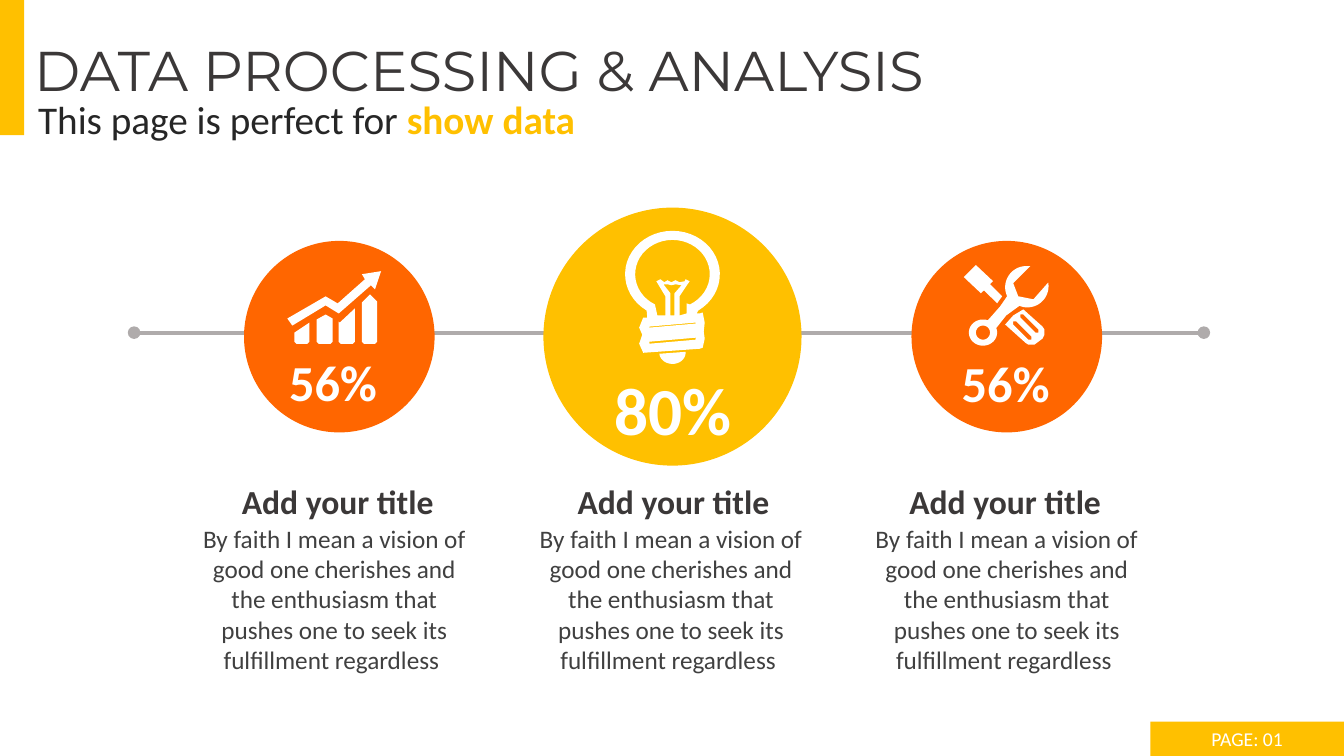
from math import cos, radians, sin

from lxml.etree import SubElement
from pptx import Presentation
from pptx.dml.color import RGBColor
from pptx.enum.shapes import MSO_CONNECTOR, MSO_SHAPE
from pptx.enum.text import MSO_ANCHOR, MSO_AUTO_SIZE, PP_ALIGN
from pptx.oxml.ns import qn
from pptx.util import Inches, Pt

COLORS = {
    "yellow": "FFC000",
    "orange": "FF6600",
    "white": "FFFFFF",
    "line": "AFABAB",
    "heading": "3B3838",
    "body": "404040",
    "subtitle": "262626",
}
BODY = (
    "By faith I mean a vision of good one cherishes and the enthusiasm "
    "that pushes one to seek its fulfillment regardless "
)


def color(name):
    return RGBColor.from_string(COLORS[name])


def arc(center_x, center_y, radius_x, radius_y, start, end, steps=40):
    angles = [radians(start + (end - start) * i / steps) for i in range(steps + 1)]
    return [(center_x + radius_x * cos(a), center_y + radius_y * sin(a)) for a in angles]


def bulb_outlines():
    return [
        arc(6.67, 2.72, 0.47, 0.43, 123, 417)
        + [(6.91, 3.11), (6.94, 3.11), (6.97, 3.1), (6.99, 3.2), (6.98, 3.29),
           (6.99, 3.36), (6.97, 3.45), (6.94, 3.46), (6.38, 3.5), (6.34, 3.41),
           (6.37, 3.32), (6.34, 3.25), (6.38, 3.15), (6.42, 3.15)],
        arc(6.67, 2.72, 0.37, 0.34, 118, 422)
        + [(6.81, 3.01), (6.81, 3.11), (6.74, 3.13), (6.74, 2.94), (6.84, 2.79),
           (6.8, 2.77), (6.79, 2.79), (6.74, 2.8), (6.7, 2.78), (6.66, 2.8),
           (6.62, 2.78), (6.59, 2.8), (6.55, 2.77), (6.51, 2.79), (6.6, 2.94),
           (6.6, 3.13), (6.52, 3.13)],
        [(6.76, 2.83), (6.7, 2.82), (6.66, 2.83), (6.62, 2.82), (6.58, 2.82),
         (6.65, 2.91), (6.65, 3.13), (6.69, 3.13), (6.69, 2.91)],
        arc(6.67, 3.5, 0.13, 0.11, -5, 175),
        [(6.9, 3.35), (6.44, 3.39), (6.44, 3.41), (6.9, 3.37)],
        [(6.9, 3.2), (6.44, 3.24), (6.44, 3.25), (6.9, 3.21)],
    ]


def bar(left, right, top_points):
    return [(left + 0.02, 3.41), (left, 3.39), *top_points, (right, 3.39), (right - 0.02, 3.41)]


def growth_outlines():
    return [
        [(2.85, 3.16), (3.23, 2.94), (3.35, 3.01), (3.62, 2.77), (3.59, 2.72),
         (3.78, 2.69), (3.72, 2.87), (3.68, 2.83), (3.36, 3.11), (3.23, 3.03), (2.9, 3.23)],
        bar(2.92, 3.07, [(2.92, 3.3), (3.07, 3.2)]),
        bar(3.14, 3.3, [(3.14, 3.17), (3.23, 3.12), (3.3, 3.16)]),
        bar(3.36, 3.52, [(3.36, 3.19), (3.37, 3.2), (3.52, 3.06)]),
        bar(3.59, 3.74, [(3.59, 3), (3.67, 2.92), (3.74, 2.99)]),
    ]


def tool_outlines():
    return [
        arc(10.19, 2.84, 0.21, 0.21, 112, -10)
        + [(10.25, 2.97), (10.1, 2.94), (10.05, 2.81), (10.22, 2.64)]
        + arc(10.18, 2.85, 0.21, 0.21, 270, 155)
        + [(9.92, 3.04), (9.85, 3.12)]
        + arc(9.75, 3.3, 0.14, 0.13, 290, -20)
        + [(9.98, 3.13)],
        arc(9.75, 3.3, 0.07, 0.07, 0, 360),
        [(9.76, 2.88), (9.89, 3.01), (9.94, 2.94), (9.82, 2.82), (9.85, 2.79),
         (9.68, 2.63), (9.56, 2.75), (9.73, 2.91)],
        [(10.15, 3.07), (10.05, 3.13), (9.97, 3.22), (10.17, 3.4), (10.2, 3.42),
         (10.26, 3.42), (10.34, 3.36), (10.36, 3.32), (10.36, 3.27), (10.34, 3.24)],
        [(10.23, 3.37), (10.2, 3.37), (10.05, 3.22), (10.05, 3.19), (10.08, 3.19), (10.23, 3.34)],
        [(10.3, 3.3), (10.27, 3.3), (10.12, 3.15), (10.12, 3.12), (10.15, 3.12), (10.3, 3.27)],
    ]


def paint(shape, fill):
    shape.shadow.inherit = False
    shape.fill.solid()
    shape.fill.fore_color.rgb = color(fill)
    shape.line.fill.background()


def add_preset(shapes, kind, box, fill):
    shape = shapes.add_shape(kind, *map(Inches, box))
    paint(shape, fill)
    return shape


def add_icon(shapes, outlines):
    contours = [[(Inches(x), Inches(y)) for x, y in outline] for outline in outlines]
    builder = shapes.build_freeform(*contours[0][0], scale=1.0)
    for index, points in enumerate(contours):
        if index:
            builder.move_to(*points[0])
        builder.add_line_segments(points[1:], close=True)
    paint(builder.convert_to_shape(), "white")


def add_run(paragraph, text, size, ink, bold=False, font="Calibri"):
    run = paragraph.add_run()
    run.text = text
    run.font.name = font
    run.font.size = Pt(size)
    run.font.bold = bold
    run.font.color.rgb = color(ink)


def add_text(shapes, box, runs, wrap=False, align=PP_ALIGN.LEFT):
    frame = shapes.add_textbox(*map(Inches, box)).text_frame
    frame.word_wrap = wrap
    frame.auto_size = MSO_AUTO_SIZE.SHAPE_TO_FIT_TEXT
    paragraph = frame.paragraphs[0]
    paragraph.alignment = align
    for run in runs:
        add_run(paragraph, *run)


def add_timeline(slide):
    line = slide.shapes.add_connector(
        MSO_CONNECTOR.STRAIGHT, Inches(11.94), Inches(3.3), Inches(1.33), Inches(3.3)
    )
    line.line.color.rgb = color("line")
    line.line.width = Pt(3)
    outline = line.line._get_or_add_ln()
    for end in ("a:headEnd", "a:tailEnd"):
        SubElement(outline, qn(end), type="oval")
    SubElement(line._element.spPr, qn("a:effectLst"))


def add_badge(slide, circle, fill, outlines, percent, label_box, size):
    shapes = slide.shapes.add_group_shape().shapes
    add_preset(shapes, MSO_SHAPE.OVAL, circle, fill)
    add_icon(shapes, outlines)
    add_text(shapes, label_box, [(percent, size, "white", True)])


def add_column(slide, body_left, title_left):
    shapes = slide.shapes.add_group_shape().shapes
    add_text(shapes, (body_left, 5.14, 2.85, 1.61), [(BODY, 18, "body")], True, PP_ALIGN.CENTER)
    add_text(shapes, (title_left, 4.72, 2.12, 0.51), [("Add your title", 24, "heading", True)])


def add_page_tag(slide):
    tag = add_preset(slide.shapes, MSO_SHAPE.RECTANGLE, (11.41, 7.16, 1.92, 0.34), "yellow")
    tag.text_frame.vertical_anchor = MSO_ANCHOR.MIDDLE
    paragraph = tag.text_frame.paragraphs[0]
    paragraph.alignment = PP_ALIGN.CENTER
    add_run(paragraph, "PAGE: 01", 14, "white")


def main():
    presentation = Presentation()
    presentation.slide_width = Inches(13.33)
    presentation.slide_height = Inches(7.5)
    slide = presentation.slides.add_slide(presentation.slide_layouts[6])

    add_preset(slide.shapes, MSO_SHAPE.RECTANGLE, (0, 0, 0.24, 1.34), "yellow")
    add_page_tag(slide)
    add_timeline(slide)
    add_badge(slide, (5.39, 2.06, 2.56, 2.56), "yellow", bulb_outlines(),
              "80%", (6, 3.6, 1.38, 0.91), 48)
    add_badge(slide, (2.42, 2.39, 1.89, 1.9), "orange", growth_outlines(),
              "56%", (2.77, 3.43, 1.08, 0.71), 36)
    add_badge(slide, (9.04, 2.39, 1.89, 1.9), "orange", tool_outlines(),
              "56%", (9.44, 3.44, 1.08, 0.71), 36)
    for body_left, title_left in ((1.89, 2.3), (5.23, 5.63), (8.56, 8.92)):
        add_column(slide, body_left, title_left)
    add_text(slide.shapes, (0.24, 0.3, 10.09, 0.77),
             [("DATA PROCESSING & ANALYSIS", 40, "heading", False, "Montserrat")])
    add_text(slide.shapes, (0.28, 0.9, 5.69, 0.57),
             [("This page is perfect for ", 28, "subtitle"), ("show data", 28, "yellow", True)])
    presentation.save("out.pptx")


if __name__ == "__main__":
    main()
